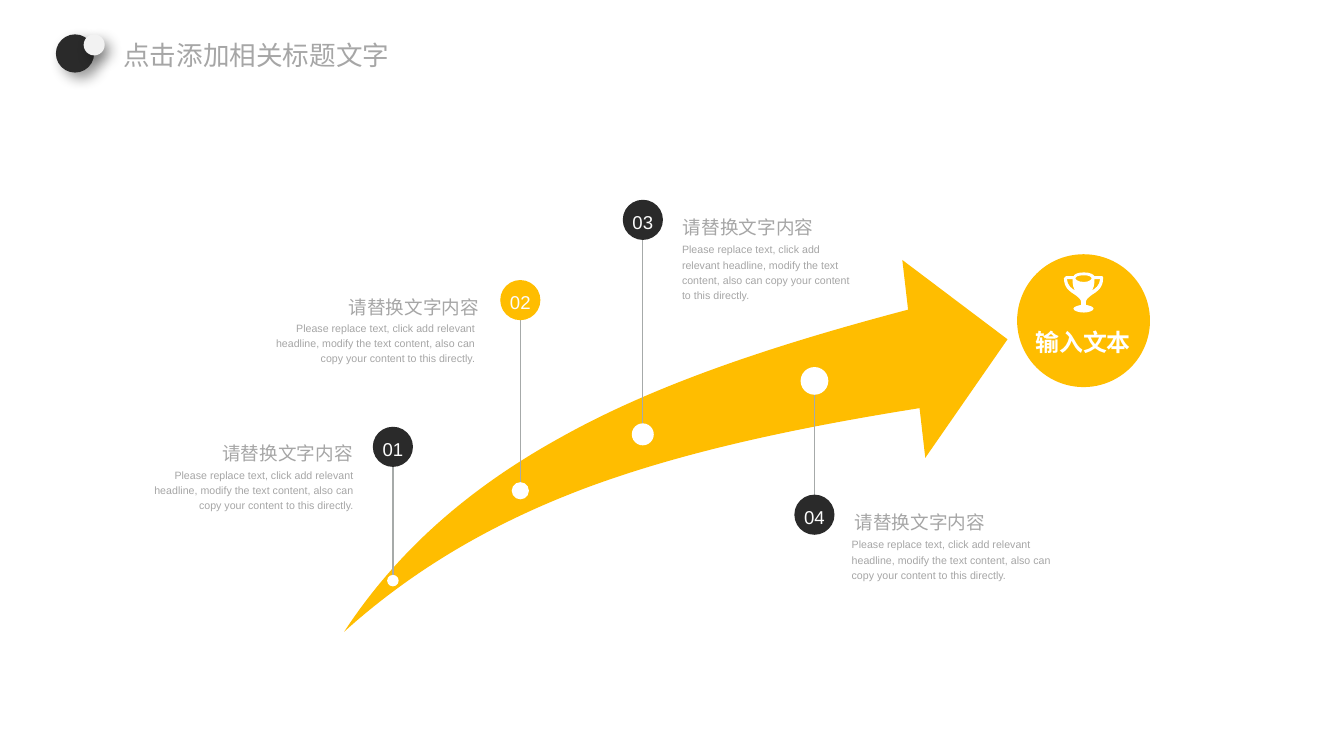
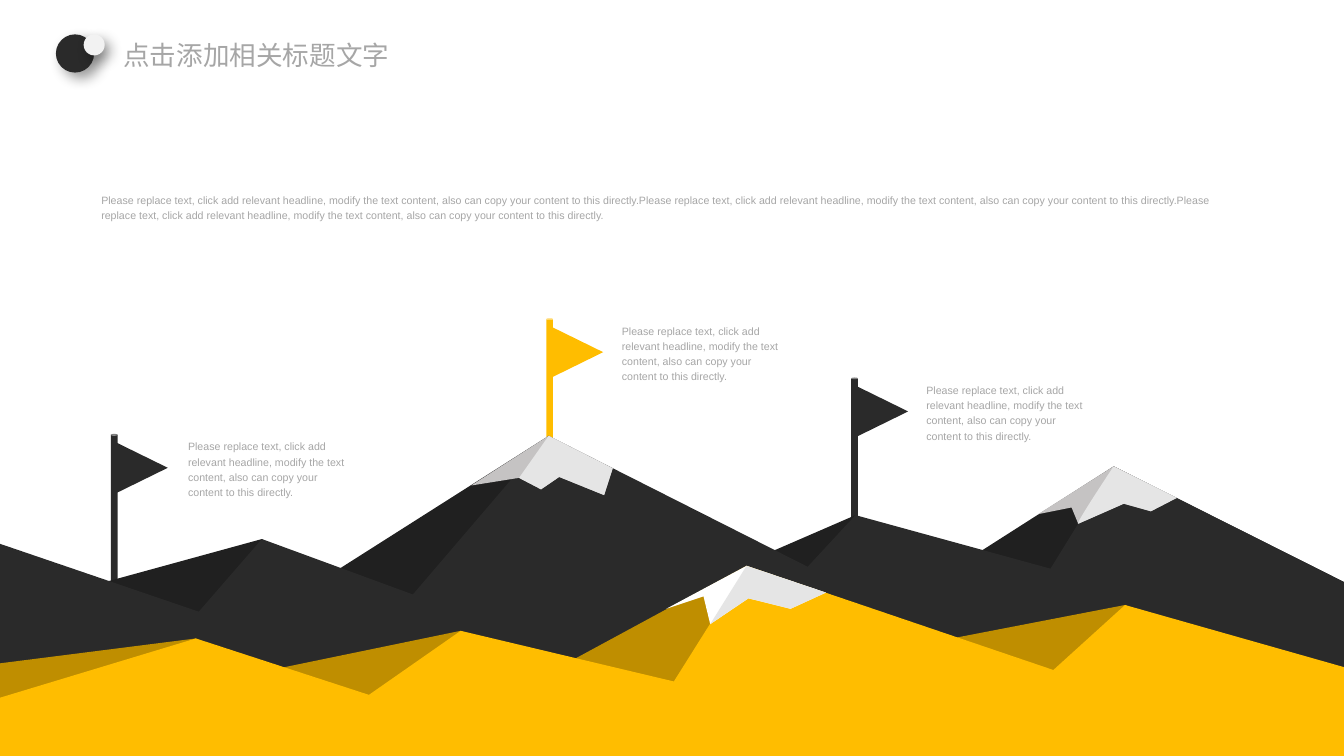
"""Build two slides: a milestone arrow and a mountain range with flags."""
from dataclasses import dataclass

from lxml import etree
from pptx import Presentation
from pptx.dml.color import RGBColor
from pptx.enum.shapes import MSO_CONNECTOR, MSO_SHAPE
from pptx.enum.text import MSO_ANCHOR, MSO_AUTO_SIZE, PP_ALIGN
from pptx.oxml.ns import qn
from pptx.util import Inches, Pt

OVAL, TRIANGLE, CAN = MSO_SHAPE.OVAL, MSO_SHAPE.ISOSCELES_TRIANGLE, MSO_SHAPE.CAN
STRAIGHT = MSO_CONNECTOR.STRAIGHT
TOP, MIDDLE = MSO_ANCHOR.TOP, MSO_ANCHOR.MIDDLE
LEFT, CENTER, RIGHT = PP_ALIGN.LEFT, PP_ALIGN.CENTER, PP_ALIGN.RIGHT
TITLE_ONLY = 5
COLUMNS, ROWS = 140.6, 79.1


@dataclass(frozen=True)
class Theme:
    """Colours, font and type sizes shared by the slides."""
    dark: str = "2A2A2A"
    dark_shade: str = "202020"
    accent: str = "FFBD00"
    accent_shade: str = "BF8E00"
    text: str = "A6A6A6"
    stem: str = "A6AAA9"
    white: str = "FFFFFF"
    number: str = "FCFCFC"
    pearl: str = "F2F2F2"
    snow: str = "E5E5E5"
    snow_shade: str = "C5C3C3"
    font: str = "Arial"
    title_size: int = 20
    goal_size: int = 18
    heading_size: int = 14
    body_size: int = 8


@dataclass(frozen=True)
class Milestone:
    """One stop on the arrow, measured in grid cells."""
    number: str
    x: float
    badge_y: float
    dot_y: float
    dot_size: float
    color: str
    side: int
    heading_gap: float
    body_gap: float
    body_width: float
    body_height: float


THEME = Theme()
TITLE = "点击添加相关标题文字"
HEADING = "请替换文字内容"
BODY = ("Please replace text, click add relevant headline, modify the text content, "
        "also can copy your content to this directly.")

MILESTONES = [
    Milestone("01", 41.1, 46.75, 60.75, 1.2, THEME.dark, -1, 4.2, 4.1, 22.6, 4.7),
    Milestone("02", 54.43, 31.4, 51.35, 1.8, THEME.accent, -1, 4.3, 4.7, 22.6, 4.7),
    Milestone("03", 67.25, 23, 45.45, 2.3, THEME.dark, 1, 4.2, 4.1, 18.7, 6.3),
    Milestone("04", 85.2, 53.85, 39.85, 2.9, THEME.dark, 1, 4.2, 3.9, 22.6, 4.7),
]
ARROW = [
    (36, 66.1), (41.5, 57.7, 49, 51.1, 58.6, 45.8), (68.4, 40.3, 80.6, 36.2, 95, 32.4),
    (94.4, 27.2), (105.4, 35.5), (96.8, 47.9), (96.2, 42.7),
    (83, 44.8, 71.5, 47.3, 61.7, 50.9), (51.7, 54.6, 43.2, 59.6, 36, 66.1),
]
TROPHY_AXIS = 113.35
TROPHY_HANDLE = [
    (111.6, 29.2), (112.2, 29.2), (112.2, 29.8, 112.3, 30.2, 112.5, 30.4),
    (112.1, 30.2, 111.7, 29.9, 111.6, 29.2),
]
TROPHY_MOUTH = [
    (113.4, 28.8), (114, 28.8, 114.2, 29, 114.2, 29.1), (114.2, 29.2, 114, 29.5, 113.4, 29.5),
    (112.7, 29.5, 112.5, 29.2, 112.5, 29.1), (112.5, 29, 112.7, 28.8, 113.4, 28.8),
]
TROPHY_CUP = [
    (113.6, 31.6), (113.6, 31.3, 113.9, 31.1, 114.3, 30.8), (114.8, 30.5, 115.4, 30.1, 115.4, 29.1),
    (115.4, 29, 115.4, 28.9, 115.3, 28.9), (114.5, 28.9), (114.4, 28.7, 114, 28.5, 113.4, 28.5),
    (112.7, 28.5, 112.4, 28.7, 112.3, 28.9), (111.5, 28.9),
    (111.4, 28.9, 111.3, 29, 111.3, 29.1), (111.3, 30.1, 111.9, 30.5, 112.4, 30.8),
    (112.8, 31.1, 113.1, 31.3, 113.1, 31.6), (113.1, 31.9),
    (112.7, 32, 112.3, 32.1, 112.3, 32.3), (112.3, 32.5, 112.8, 32.7, 113.4, 32.7),
    (113.9, 32.7, 114.4, 32.5, 114.4, 32.3), (114.4, 32.1, 114.1, 32, 113.6, 31.9),
]
FLAGS = [(89.05, 39.5, 15.3, 96.9, THEME.dark), (11.6, 45.4, 16.4, 19.67, THEME.dark),
         (57.15, 33.3, 14.5, 65.05, THEME.accent)]
RANGES = [
    (THEME.dark_shade, [(116.5, 48.8), (91.6, 64.7), (89.5, 53.9), (62.3, 65.7), (57.4, 45.6),
                        (33, 61.1), (27.4, 56.4), (4.8, 62.6), (0.4, ROWS), (COLUMNS, ROWS),
                        (COLUMNS, 60.9)]),
    (THEME.dark, [(COLUMNS, 60.9), (COLUMNS, ROWS), (0, ROWS), (0, 56.9), (20.8, 64),
                  (27.4, 56.4), (43.2, 62.2), (57.4, 45.6), (84.5, 59.3), (89.5, 53.9),
                  (109.9, 59.5), (116.5, 48.8)]),
    (THEME.snow_shade, [(123.1, 52.1), (120.4, 53.5), (117.5, 52.7), (112.8, 54.8),
                        (112.1, 53.1), (108.6, 53.8), (116.5, 48.8)]),
    (THEME.snow_shade, [(57.4, 45.6), (64.1, 49), (63.2, 51.8), (58.5, 49.9), (56.6, 51.2),
                        (54.3, 50), (49.3, 50.8)]),
    (THEME.snow, [(54.3, 50), (57.4, 45.6), (64.1, 49), (63.2, 51.8), (58.5, 49.9),
                  (56.6, 51.2)]),
    (THEME.snow, [(116.5, 48.8), (116.5, 48.8, 112.3, 55.1, 112.8, 54.8),
                  (113.3, 54.6, 117.6, 52.7, 117.6, 52.7), (120.4, 53.5), (123.1, 52.1)]),
    (THEME.accent_shade, [(117.7, 63.3), (85.6, 69.5), (78.1, 59.2), (54.1, 72.2), (48.2, 66),
                          (23, 71.2), (20.5, 66.8), (0, 69.4), (0, ROWS), (COLUMNS, ROWS),
                          (COLUMNS, 72.7)]),
    (THEME.accent, [(COLUMNS, 69.8), (117.7, 63.3), (110.2, 70.1), (78.1, 59.2), (70.5, 71.3),
                    (48.2, 66), (38.6, 72.7), (20.5, 66.8), (0, 73), (0, ROWS),
                    (COLUMNS, ROWS)]),
    (THEME.white, [(86.4, 62), (78.1, 59.2), (69.7, 63.7), (73.6, 62.4), (74.3, 65.3),
                   (78.3, 62.6), (82.7, 63.7)]),
    (THEME.snow, [(78.1, 59.2), (74.3, 65.3), (78.3, 62.6), (82.7, 63.7), (86.4, 62)]),
]


def cells(*counts):
    """Turn grid cells into lengths."""
    return [Inches(count / 10) for count in counts]


def paint(shape, color):
    """Give a shape a flat fill without line or shadow."""
    shape.shadow.inherit = False
    shape.fill.solid()
    shape.fill.fore_color.rgb = RGBColor.from_string(color)
    shape.line.fill.background()
    return shape


def add_solid(slide, preset, box, color):
    """Add a flat preset shape in a grid box."""
    return paint(slide.shapes.add_shape(preset, *cells(*box)), color)


def add_disc(slide, x, y, size, color):
    """Add a circle around a centre."""
    return add_solid(slide, OVAL, (x - size / 2, y - size / 2, size, size), color)


def mirror(contour, axis):
    """Reflect a contour in a vertical axis."""
    return [tuple(value if i % 2 else 2 * axis - value for i, value in enumerate(segment))
            for segment in contour]


def contour_points(contour):
    """List the end and control points of a contour."""
    return [cells(*segment[i:i + 2]) for segment in contour for i in range(0, len(segment), 2)]


def bend(outline, contours):
    """Join each curve's three line steps into one cubic curve."""
    steps = iter(list(outline._element.spPr.iter(qn("a:lnTo"))))
    for contour in contours:
        for segment in contour[1:]:
            step = next(steps)
            if len(segment) == 2:
                continue
            curve = etree.Element(qn("a:cubicBezTo"))
            step.addprevious(curve)
            for part in (step, next(steps), next(steps)):
                curve.append(part[0])
                part.getparent().remove(part)


def add_outline(slide, contours, color):
    """Add one flat freeform made of closed contours of lines and curves."""
    first, *others = map(contour_points, contours)
    builder = slide.shapes.build_freeform(*first[0])
    builder.add_line_segments(first[1:], close=True)
    for points in others:
        builder.move_to(*points[0])
        builder.add_line_segments(points[1:], close=True)
    outline = paint(builder.convert_to_shape(), color)
    bend(outline, contours)


def write(shape, text, size, color, align=LEFT, anchor=TOP, spacing=1.2, bold=False):
    """Write one formatted paragraph into a shape without insets."""
    frame = shape.text_frame
    frame.text = text
    frame.word_wrap = True
    frame.vertical_anchor = anchor
    frame.margin_left = frame.margin_right = frame.margin_top = frame.margin_bottom = 0
    paragraph = frame.paragraphs[0]
    paragraph.alignment = align
    paragraph.line_spacing = spacing
    paragraph.font.name = THEME.font
    paragraph.font.size = Pt(size)
    paragraph.font.bold = bold
    paragraph.font.color.rgb = RGBColor.from_string(color)


def add_text(slide, box, text, size=THEME.body_size, color=THEME.text, **style):
    """Add a text box in a grid box."""
    write(slide.shapes.add_textbox(*cells(*box)), text, size, color, **style)


def add_stem(slide, x, start, end):
    """Add a thin vertical line."""
    stem = slide.shapes.add_connector(STRAIGHT, *cells(x, start, x, end))
    stem.line.color.rgb = RGBColor.from_string(THEME.stem)
    stem.line.width = Pt(1)
    etree.SubElement(stem._element.spPr, qn("a:effectLst"))


def add_pearl(slide, box, color):
    """Add a circle with a soft diagonal shadow."""
    pearl = add_solid(slide, OVAL, box, color)
    effects = pearl._element.spPr.find(qn("a:effectLst"))
    shadow = etree.SubElement(effects, qn("a:outerShdw"), blurRad=str(Pt(10)),
                              dist=str(Pt(6)), dir="2700000", algn="tl", rotWithShape="0")
    black = etree.SubElement(shadow, qn("a:srgbClr"), val="000000")
    etree.SubElement(black, qn("a:alpha"), val="40000")


def add_titled_slide(deck):
    """Add a slide with the shared title and emblem."""
    slide = deck.slides.add_slide(deck.slide_layouts[TITLE_ONLY])
    title = slide.shapes.title
    title.left, title.top, title.width, title.height = cells(11.8, 3.6, 33.5, 4)
    write(title, TITLE, THEME.title_size, THEME.text, spacing=1.0)
    frame = title.text_frame
    frame.auto_size = MSO_AUTO_SIZE.NONE
    frame.margin_left = frame.margin_right = Inches(0.11)
    frame.margin_top = frame.margin_bottom = Inches(0.05)
    add_pearl(slide, (5.85, 3.6, 4, 4), THEME.dark)
    add_pearl(slide, (8.75, 3.6, 2.2, 2.2), THEME.pearl)
    return slide


def add_milestone(slide, stop):
    """Add a numbered badge, its stem and dot, and the text beside it."""
    add_stem(slide, stop.x, stop.dot_y, stop.badge_y)
    badge = add_disc(slide, stop.x, stop.badge_y, 4.2, stop.color)
    write(badge, stop.number, THEME.heading_size, THEME.number, CENTER, MIDDLE)
    add_disc(slide, stop.x, stop.dot_y, stop.dot_size, THEME.white)

    before = stop.side < 0
    align = RIGHT if before else LEFT
    heading_width, heading_height = 15.9, 2.6 if before else 2.8
    heading_top = stop.badge_y - 0.85
    heading_left = stop.x + stop.side * stop.heading_gap - before * heading_width
    body_left = stop.x + stop.side * stop.body_gap - before * stop.body_width
    add_text(slide, (heading_left, heading_top, heading_width, heading_height), HEADING,
             THEME.heading_size, align=align, anchor=MIDDLE)
    add_text(slide, (body_left, heading_top + heading_height + 0.25,
                     stop.body_width, stop.body_height), BODY, align=align)


def add_goal(slide):
    """Add the goal disc with its trophy and caption."""
    add_disc(slide, 113.35, 33.55, 13.9, THEME.accent)
    handles = [TROPHY_HANDLE, mirror(TROPHY_HANDLE, TROPHY_AXIS)]
    add_outline(slide, [TROPHY_CUP, TROPHY_MOUTH, *handles], THEME.white)
    add_text(slide, (108.2, 33.3, 10.2, 4.1), "输入文本", THEME.goal_size, THEME.white,
             align=CENTER, anchor=MIDDLE, spacing=1.3, bold=True)


def add_flag(slide, left, top, height, text_left, color):
    """Add a pennant on a pole with its description."""
    pennant = add_solid(slide, TRIANGLE, (left + 0.5, top + 0.8, 5.4, 5.5), color)
    pennant.rotation = 90
    add_solid(slide, CAN, (left, top, 0.7, height), color)
    add_text(slide, (text_left, top + 0.4, 16.8, 6.3), BODY)


def build_arrow_slide(deck):
    """Build the rising arrow with four milestones."""
    slide = add_titled_slide(deck)
    add_outline(slide, [ARROW], THEME.accent)
    for stop in MILESTONES:
        add_milestone(slide, stop)
    add_goal(slide)


def build_mountain_slide(deck):
    """Build the mountain range with three flags."""
    slide = add_titled_slide(deck)
    for flag in FLAGS:
        add_flag(slide, *flag)
    for color, ridge in RANGES:
        add_outline(slide, [ridge], color)
    add_text(slide, (10.6, 20, 119.3, 3.1), BODY * 3)


def main():
    """Build and save the deck."""
    deck = Presentation()
    deck.slide_width, deck.slide_height = cells(COLUMNS, ROWS)
    build_arrow_slide(deck)
    build_mountain_slide(deck)
    deck.save("out.pptx")


if __name__ == "__main__":
    main()
